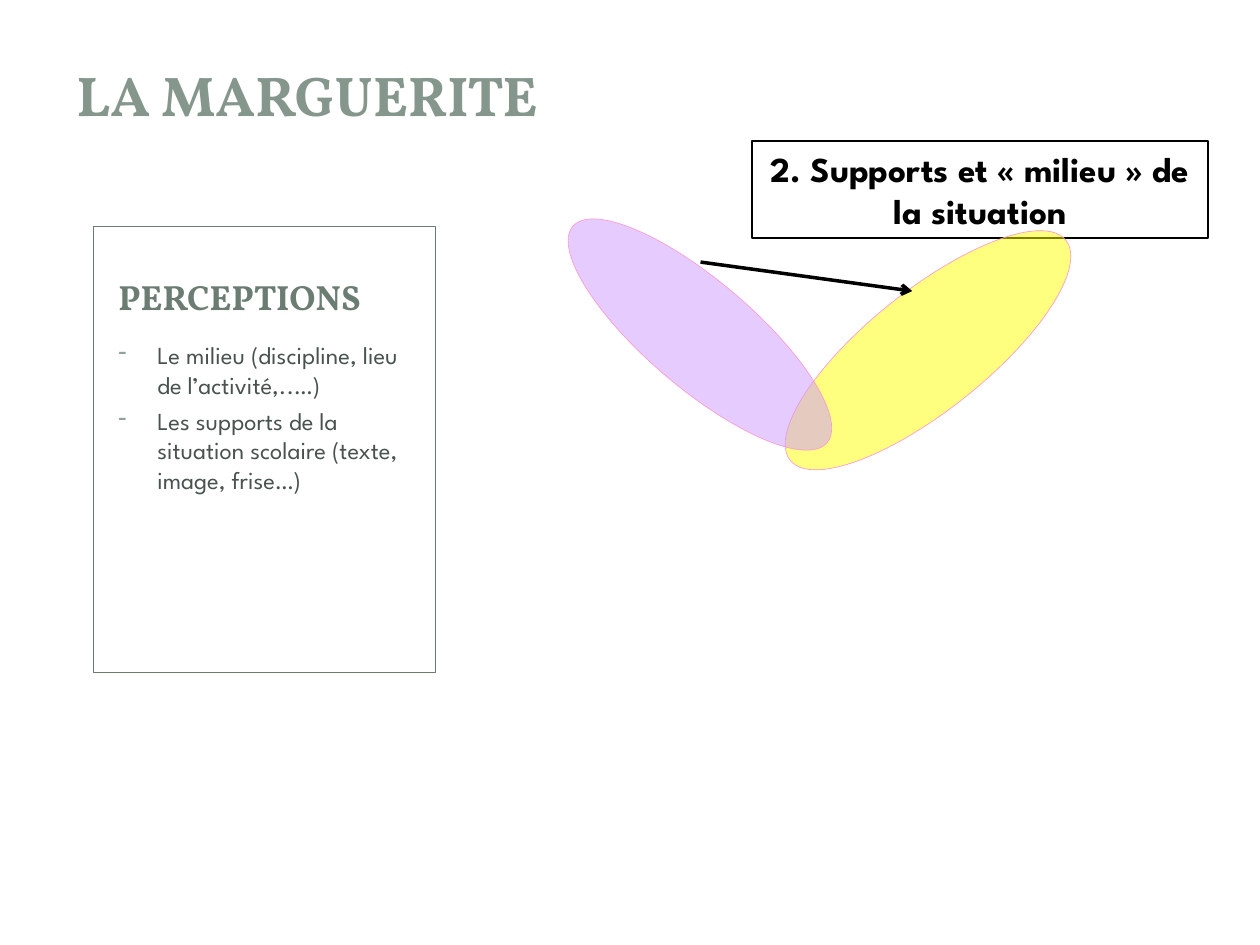
from pptx import Presentation
from pptx.dml.color import RGBColor
from pptx.enum.shapes import MSO_CONNECTOR, MSO_SHAPE
from pptx.enum.text import MSO_ANCHOR, PP_ALIGN
from pptx.oxml.ns import qn
from pptx.util import Inches, Pt
from lxml.etree import SubElement

HEADING, BODY = "Vollkorn", "League Spartan"
TITLE = "LA MARGUERITE"
PANEL_TITLE = "PERCEPTIONS"
PERCEPTIONS = [
    "Le milieu (discipline, lieu de l’activité,..…)",
    "Les supports de la situation scolaire (texte, image, frise…)",
]
LABEL = "2. Supports et «\u00a0milieu » de la situation"
# box (left, top, width, height), rotation, fill
PETALS = [
    ((6.89, 1.38, 0.95, 2.8), 51.4, "FFFF00"),
    ((5.13, 1.33, 0.85, 2.65), 310.4, "CC99FF"),
]
ARROW = (5.56, 2.08, 7.24, 2.31)
PANEL = (0.74, 1.8, 2.72, 3.54)
PANEL_INSET, PANEL_TITLE_H, PANEL_BODY_TOP, PANEL_BODY_H = 0.1, 0.67, 0.85, 2.51


def rgb(color):
    return RGBColor.from_string(color)


def inches(values):
    return [Inches(v) for v in values]


def add_outlined(s, kind, box, line, width, fill=None):
    sp = s.shapes.add_shape(kind, *inches(box))
    sp.shadow.inherit = False
    if fill:
        sp.fill.solid()
        sp.fill.fore_color.rgb = rgb(fill)
    else:
        sp.fill.background()
    sp.line.color.rgb = rgb(line)
    sp.line.width = Pt(width)
    return sp


def set_text(sp, lines, font, size, color, bold=True,
             align=PP_ALIGN.LEFT, anchor=MSO_ANCHOR.TOP):
    tf = sp.text_frame
    tf.word_wrap = True
    tf.vertical_anchor = anchor
    tf.text = "\n".join(lines)
    for p in tf.paragraphs:
        p.alignment = align
        for r in p.runs:
            r.font.name, r.font.size, r.font.bold = font, Pt(size), bold
            r.font.color.rgb = rgb(color)
    return tf


def add_text(s, box, *args, **kwargs):
    return set_text(s.shapes.add_textbox(*inches(box)), *args, **kwargs)


def add_dash(p, color, indent=0.31):
    p.space_before = Pt(4)
    pPr = p._p.get_or_add_pPr()
    pPr.set("marL", str(Inches(indent)))
    pPr.set("indent", str(-Inches(indent)))
    SubElement(SubElement(pPr, qn("a:buClr")), qn("a:srgbClr"), val=color)
    SubElement(pPr, qn("a:buFontTx"))
    SubElement(pPr, qn("a:buChar"), char="-")


def set_alpha(sp, percent):
    color = sp.fill._xPr.find(qn("a:solidFill"))[0]
    SubElement(color, qn("a:alpha"), val=str(percent * 1000))


def add_panel(s):
    left, top, width, _ = PANEL
    add_outlined(s, MSO_SHAPE.RECTANGLE, PANEL, "6B7D72", 0.5, "FFFFFF")
    x, w = left + PANEL_INSET, width - 2 * PANEL_INSET
    add_text(s, (x, top + PANEL_INSET, w, PANEL_TITLE_H), [PANEL_TITLE],
             HEADING, 20, "6B7D72", anchor=MSO_ANCHOR.BOTTOM)
    tf = add_text(s, (x, top + PANEL_BODY_TOP, w, PANEL_BODY_H), PERCEPTIONS,
                  BODY, 14, "47534C", bold=False)
    for p in tf.paragraphs:
        add_dash(p, "93A299")


def add_arrow(s):
    arrow = s.shapes.add_connector(MSO_CONNECTOR.STRAIGHT, *inches(ARROW))
    arrow.line.color.rgb = rgb("000000")
    arrow.line.width = Pt(2)
    SubElement(arrow.line._get_or_add_ln(), qn("a:tailEnd"), type="arrow")
    SubElement(arrow._element.spPr, qn("a:effectLst"))


def main():
    prs = Presentation()
    prs.slide_width, prs.slide_height = Inches(10), Inches(7.5)
    s = prs.slides.add_slide(prs.slide_layouts[6])

    add_panel(s)
    label = add_outlined(s, MSO_SHAPE.RECTANGLE, (5.97, 1.12, 3.62, 0.77), "000000", 1)
    set_text(label, [LABEL], BODY, 20, "000000", align=PP_ALIGN.CENTER)
    for box, rotation, fill in PETALS:
        petal = add_outlined(s, MSO_SHAPE.OVAL, box, "FF99CC", 0.37, fill)
        petal.rotation = rotation
        set_alpha(petal, 50)
    add_text(s, (0.51, 0.43, 4.65, 0.64), [TITLE], HEADING, 32, "85968C")
    add_arrow(s)
    prs.save("out.pptx")


if __name__ == "__main__":
    main()
